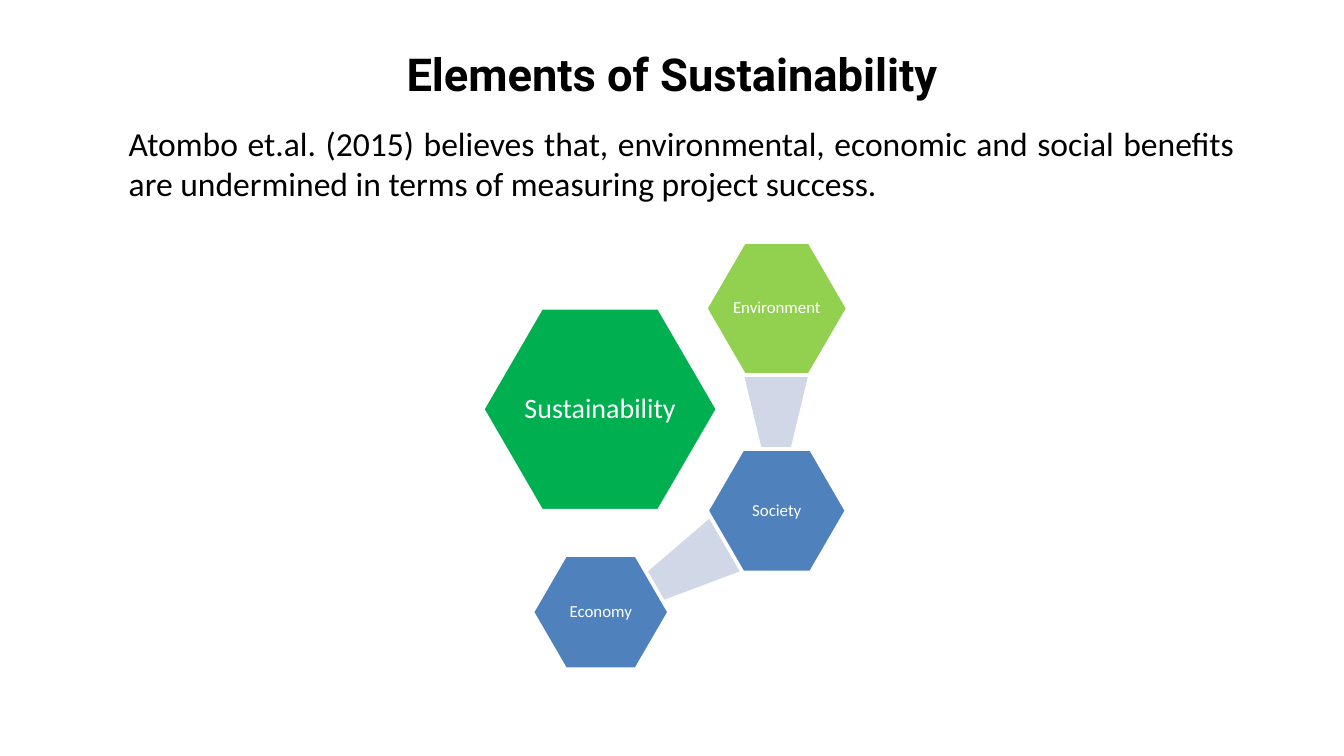
import pptx
import pptx.dml.color
import pptx.enum.shapes
import pptx.enum.text
import pptx.util

COLORS = {
    "ink": "000000",
    "white": "FFFFFF",
    "core": "00B050",
    "environment": "92D050",
    "pillar": "4F81BD",
    "link": "D0D8E8",
}
COLUMNS, ROWS = 100, 56.25
CELL = pptx.util.Inches(0.1)
ALIGN = pptx.enum.text.PP_ALIGN
ANCHOR = pptx.enum.text.MSO_ANCHOR


def cells(*counts):
    """Turn counts of grid columns or rows into lengths."""
    return [pptx.util.Emu(round(count * CELL)) for count in counts]


def rgb(name):
    return pptx.dml.color.RGBColor.from_string(COLORS[name])


def write(frame, text, size, color="ink", font="Calibri", bold=False,
          align=ALIGN.CENTER, anchor=ANCHOR.MIDDLE, wrap=True, spacing=None):
    frame.word_wrap = wrap
    frame.vertical_anchor = anchor
    paragraph = frame.paragraphs[0]
    paragraph.alignment = align
    paragraph.line_spacing = spacing
    run = paragraph.add_run()
    run.text = text
    run.font.size = pptx.util.Pt(size)
    run.font.name = font
    run.font.bold = bold
    run.font.color.rgb = rgb(color)


def add_text(slide, area, text, **text_format):
    box = slide.shapes.add_textbox(*cells(*area))
    write(box.text_frame, text, **text_format)


def add_hexagon(slide, area, fill):
    hexagon = slide.shapes.add_shape(
        pptx.enum.shapes.MSO_SHAPE.HEXAGON, *cells(*area))
    hexagon.adjustments[0] = 0.29
    hexagon.shadow.inherit = False
    hexagon.fill.solid()
    hexagon.fill.fore_color.rgb = rgb(fill)
    hexagon.line.fill.background()
    return hexagon


def add_element(slide, area, fill, label, size=9):
    element = add_hexagon(slide, area, fill)
    element.line.color.rgb = rgb("white")
    element.line.width = pptx.util.Pt(2)
    frame = element.text_frame
    frame.margin_left = frame.margin_right = 0
    frame.margin_top = frame.margin_bottom = 0
    write(frame, label, size, color="white", wrap=False, spacing=0.9)


def add_link(slide, area, rotation=0):
    """Add a pale hexagon whose uncovered end joins two elements."""
    add_hexagon(slide, area, "link").rotation = rotation


def main():
    deck = pptx.Presentation()
    deck.slide_width, deck.slide_height = cells(COLUMNS, ROWS)
    slide = deck.slides.add_slide(deck.slide_layouts[6])

    add_text(slide, (10.65, 0.1, 78.7, 10.7), "Elements of Sustainability",
             size=24.3, font="Roboto", bold=True)
    add_text(slide, (8.6, 8.65, 84.3, 7.1),
             "Atombo et.al. (2015) believes that, environmental, economic and "
             "social benefits are undermined in terms of measuring project "
             "success.",
             size=18, align=ALIGN.JUSTIFY, anchor=ANCHOR.TOP)

    add_element(slide, (35.9, 22.9, 17.5, 15.1), "core", "Sustainability", 15)
    add_link(slide, (55.2, 21.1, 5.1, 12.3))
    add_element(slide, (52.5, 18, 10.6, 9.9), "environment", "Environment")
    add_link(slide, (51.8, 32.9, 4.6, 15.1), rotation=59.4)
    add_element(slide, (52.6, 33.4, 10.4, 9.2), "pillar", "Society")
    add_element(slide, (39.6, 41.3, 10.2, 8.5), "pillar", "Economy")

    deck.save("out.pptx")


if __name__ == "__main__":
    main()
